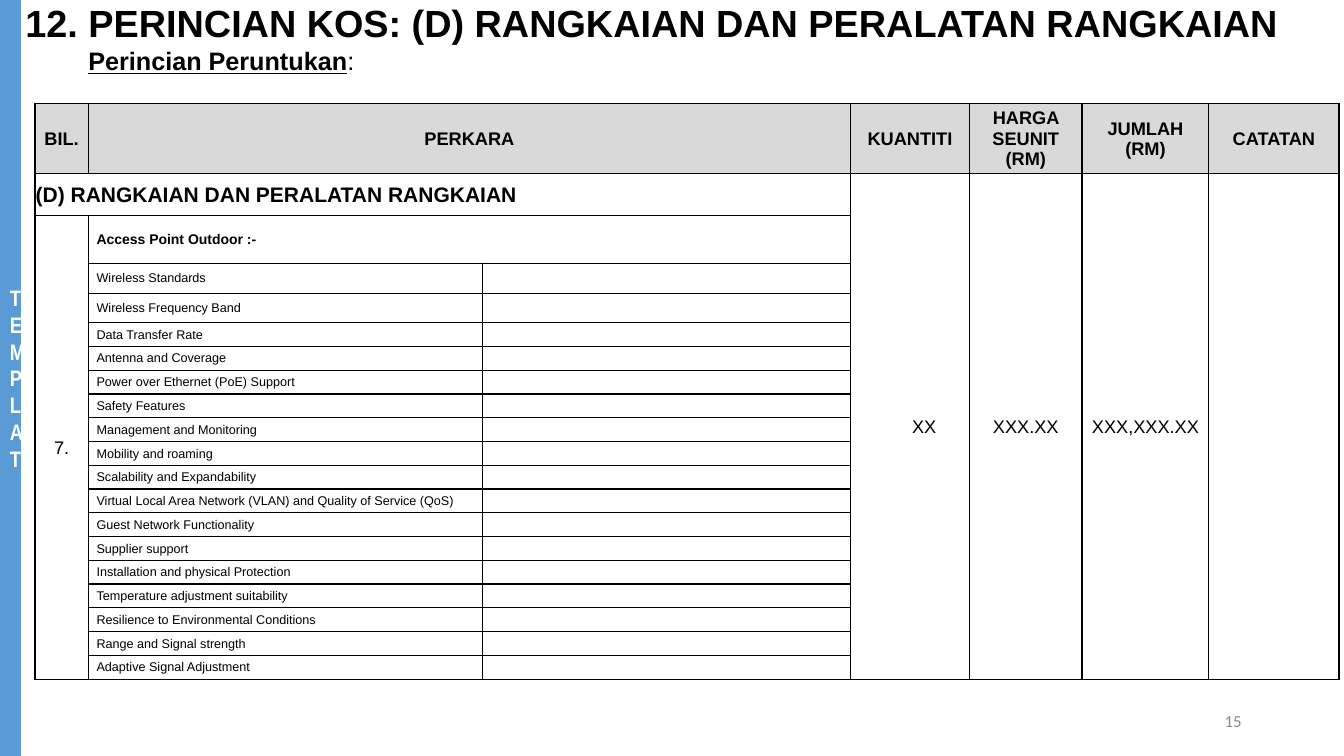
from pptx import Presentation
from pptx.dml.color import RGBColor
from pptx.enum.shapes import MSO_SHAPE
from pptx.enum.text import MSO_ANCHOR, MSO_AUTO_SIZE, PP_ALIGN
from pptx.oxml import parse_xml
from pptx.oxml.ns import nsdecls
from pptx.util import Emu, Pt

BLACK = RGBColor(0x00, 0x00, 0x00)
WHITE = RGBColor(0xFF, 0xFF, 0xFF)
BLUE = RGBColor(0x5B, 0x9B, 0xD5)
HEADER_GREY = RGBColor(0xD9, 0xD9, 0xD9)
NUMBER_GREY = RGBColor(0x88, 0x88, 0x88)

COLUMN_WIDTHS = [76, 563, 526, 170, 161, 181, 186]
HEADERS = {0: "BIL.", 1: "PERKARA", 3: "KUANTITI", 4: "HARGA SEUNIT\n(RM)",
           5: "JUMLAH\n(RM)", 6: "CATATAN"}
FEATURES = [
    "Wireless Standards",
    "Wireless Frequency Band",
    "Data Transfer Rate",
    "Antenna and Coverage",
    "Power over Ethernet (PoE) Support",
    "Safety Features",
    "Management and Monitoring",
    "Mobility and roaming",
    "Scalability and Expandability",
    "Virtual Local Area Network (VLAN) and Quality of Service (QoS)",
    "Guest Network Functionality",
    "Supplier support",
    "Installation and physical Protection",
    "Temperature adjustment suitability",
    "Resilience to Environmental Conditions",
    "Range and Signal strength",
    "Adaptive Signal Adjustment",
]
FIRST_FEATURE_ROW = 3
ROW_HEIGHTS = [100, 60, 68, 43, 42] + [34] * (len(FEATURES) - 2)


def px(length):
    """144 px make one inch."""
    return Emu(length * 6350)


def place(shape, left, top, width, height):
    shape.left, shape.top = px(left), px(top)
    shape.width, shape.height = px(width), px(height)


def format_paragraph(paragraph, size, color=BLACK, bold=False, name="Arial",
                     align=PP_ALIGN.LEFT):
    paragraph.alignment = align
    font = paragraph.font
    font.name, font.size, font.bold = name, Pt(size), bold
    font.color.rgb = color


def add_text(slide, box, text, anchor=MSO_ANCHOR.TOP, **style):
    shape = slide.shapes.add_textbox(*map(px, box))
    frame = shape.text_frame
    frame.word_wrap = True
    frame.vertical_anchor = anchor
    frame.text = text
    format_paragraph(frame.paragraphs[0], **style)
    return frame.paragraphs[0]


def add_sidebar(slide):
    shape = slide.shapes.add_shape(MSO_SHAPE.RECTANGLE, 0, 0, px(30), px(1080))
    shape.shadow.inherit = False
    shape.fill.solid()
    shape.fill.fore_color.rgb = BLUE
    shape.line.fill.background()
    frame = shape.text_frame
    frame.word_wrap = True
    frame.vertical_anchor = MSO_ANCHOR.MIDDLE
    frame.text = "TEMPLAT"
    format_paragraph(frame.paragraphs[0], 16, WHITE, True, "Arial Narrow",
                     PP_ALIGN.CENTER)


def set_title(slide, text):
    title = slide.shapes.title
    place(title, 22, -7, 1941, 115)
    frame = title.text_frame
    frame.text = text
    frame.auto_size = MSO_AUTO_SIZE.NONE
    frame.vertical_anchor = MSO_ANCHOR.TOP
    format_paragraph(frame.paragraphs[0], 27, bold=True)


def add_borders(cell):
    properties = cell._tc.get_or_add_tcPr()
    for position, side in enumerate(("lnL", "lnR", "lnT", "lnB")):
        properties.insert(position, parse_xml(
            f'<a:{side} {nsdecls("a")} w="12700"><a:solidFill>'
            f'<a:srgbClr val="{BLACK}"/></a:solidFill></a:{side}>'))


def fill_cell(cell, text, size, fill=None, inset=1, **style):
    cell.text = text
    cell.vertical_anchor = MSO_ANCHOR.MIDDLE
    cell.margin_left = px(inset)
    cell.margin_right = cell.margin_top = px(1)
    cell.margin_bottom = 0
    if fill is None:
        cell.fill.background()
    else:
        cell.fill.solid()
        cell.fill.fore_color.rgb = fill
    for paragraph in cell.text_frame.paragraphs:
        format_paragraph(paragraph, size, **style)
        if not text:
            # An empty cell takes its line height from the end mark
            paragraph._p.append(parse_xml(
                f'<a:endParaRPr {nsdecls("a")} sz="{size * 100}"/>'))


def add_cost_table(slide):
    rows, columns = len(ROW_HEIGHTS), len(COLUMN_WIDTHS)
    table = slide.shapes.add_table(
        rows, columns, px(50), px(148),
        px(sum(COLUMN_WIDTHS)), px(sum(ROW_HEIGHTS))).table
    for column, width in zip(table.columns, COLUMN_WIDTHS):
        column.width = px(width)
    for row, height in zip(table.rows, ROW_HEIGHTS):
        row.height = px(height)
    for cell in table.iter_cells():
        fill_cell(cell, "", 9)
        add_borders(cell)

    # Merged areas
    last = rows - 1
    merges = [((0, 1), (0, 2)), ((1, 0), (1, 2)), ((2, 0), (last, 0)),
              ((2, 1), (2, 2))]
    merges += [((1, column), (last, column)) for column in range(3, columns)]
    for start, end in merges:
        table.cell(*start).merge(table.cell(*end))

    # Header and section rows
    for column, text in HEADERS.items():
        fill_cell(table.cell(0, column), text, 13, HEADER_GREY, bold=True,
                  align=PP_ALIGN.CENTER)
    fill_cell(table.cell(1, 0), "(D) RANGKAIAN DAN PERALATAN RANGKAIAN", 15,
              WHITE, bold=True)

    # Item number, quantity and prices
    fill_cell(table.cell(1, 3), "XX", 13, WHITE, inset=88)
    for row, column, text in ((2, 0, "7."), (1, 4, "XXX.XX"),
                              (1, 5, "XXX,XXX.XX"), (1, 6, "")):
        fill_cell(table.cell(row, column), text, 13, WHITE,
                  align=PP_ALIGN.CENTER)

    # Item and its features
    fill_cell(table.cell(2, 1), "Access Point Outdoor :-", 10, inset=12,
              bold=True)
    for row, feature in enumerate(FEATURES, FIRST_FEATURE_ROW):
        fill_cell(table.cell(row, 1), feature, 9, inset=12)


def main():
    presentation = Presentation()
    presentation.slide_width, presentation.slide_height = px(1920), px(1080)
    slide = presentation.slides.add_slide(presentation.slide_layouts[5])

    add_sidebar(slide)
    add_text(slide, (1356, 1001, 432, 58), "15", MSO_ANCHOR.MIDDLE, size=12,
             color=NUMBER_GREY, name="Calibri", align=PP_ALIGN.RIGHT)
    set_title(slide, "12. PERINCIAN KOS: (D) RANGKAIAN DAN PERALATAN RANGKAIAN")

    # Subtitle: underlined heading followed by a plain colon
    subtitle = add_text(slide, (112, 58, 1202, 58), "Perincian Peruntukan",
                        size=18)
    heading = subtitle.runs[0].font
    heading.bold = heading.underline = True
    subtitle.add_run().text = ":"

    add_cost_table(slide)
    presentation.save("out.pptx")


if __name__ == "__main__":
    main()
